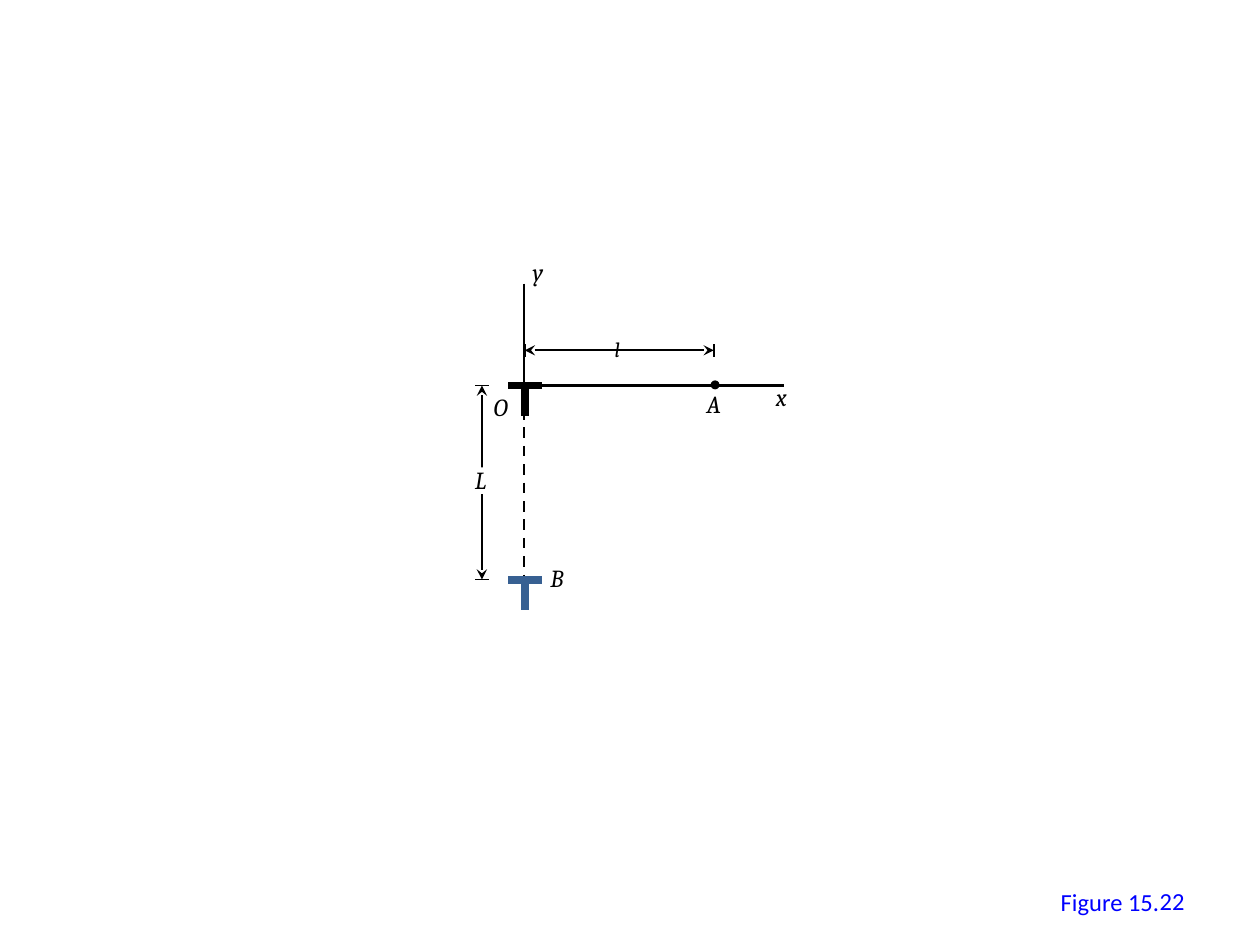
from collections import namedtuple

from pptx import Presentation
from pptx.dml.color import RGBColor
from pptx.enum.dml import MSO_LINE_DASH_STYLE as Dash
from pptx.enum.shapes import MSO_CONNECTOR as Connector, MSO_SHAPE as Shape
from pptx.enum.text import MSO_ANCHOR as Anchor, MSO_AUTO_SIZE as AutoSize, PP_ALIGN as Align
from pptx.oxml.ns import qn
from pptx.util import Inches, Pt
from lxml.etree import SubElement

Box = namedtuple("Box", "left top width height")
CELL = 0.1
BLACK, WHITE, BLUE, STEEL = "000000", "FFFFFF", "0000FF", "376092"
SYMBOL = {"name": "Cambria", "size": Pt(14), "italic": True}
SMALL_SYMBOL = {**SYMBOL, "size": Pt(12)}
CAPTION = {"name": "Calibri", "size": Pt(14)}


def cells(*values):
    """Turn grid columns or rows into lengths."""
    return [Inches(value * CELL) for value in values]


def paint(color_format, color):
    """Apply a hex colour to a fill, line or font colour."""
    color_format.rgb = RGBColor.from_string(color)


def add_line(slide, start, end, width=1.5, color=BLACK, dash=None, arrows=False):
    """Draw a straight line between two grid points."""
    line = slide.shapes.add_connector(Connector.STRAIGHT, *cells(*start, *end))
    line.line.width = Pt(width)
    paint(line.line.color, color)
    if dash:
        line.line.dash_style = dash
    properties = line.line._get_or_add_ln()
    for tag in ("a:headEnd", "a:tailEnd") if arrows else ():
        SubElement(properties, qn(tag), type="stealth")
    SubElement(line._element.spPr, qn("a:effectLst"))


def add_filled(slide, kind, box, color, line_width=None):
    """Draw a filled shape, outlined in its own colour if a width is given."""
    shape = slide.shapes.add_shape(kind, *cells(*box))
    shape.shadow.inherit = False
    shape.fill.solid()
    paint(shape.fill.fore_color, color)
    if line_width:
        paint(shape.line.color, color)
        shape.line.width = Pt(line_width)
    else:
        shape.line.fill.background()


def add_text(slide, box, text, style, color=BLACK, align=None):
    """Write one label; an aligned label wraps in its box, others fit the text."""
    frame = slide.shapes.add_textbox(*cells(*box)).text_frame
    frame.word_wrap = align is not None
    frame.auto_size = AutoSize.NONE if align else AutoSize.SHAPE_TO_FIT_TEXT
    frame.vertical_anchor = Anchor.MIDDLE if align else Anchor.TOP
    paragraph = frame.paragraphs[0]
    paragraph.alignment = align
    run = paragraph.add_run()
    run.text = text
    for name, value in style.items():
        setattr(run.font, name, value)
    paint(run.font.color, color)


def add_axes(slide, box):
    """Draw the x axis, the y axis and the dashed path below the origin."""
    left, bottom = box.left, box.top + box.height
    add_line(slide, (left + box.width, bottom), (left, bottom))
    add_line(slide, (left, box.top), (left, bottom - 0.3))
    add_line(slide, (left, bottom + 0.4), (left, bottom + 15.4), dash=Dash.DASH)


def add_tee(slide, box, color):
    """Draw a T from a bar along the top of the box and a stem down its middle."""
    middle = box.left + box.width / 2
    add_line(slide, (box.left + box.width, box.top), (box.left, box.top), 4.5, color)
    add_line(slide, (middle, box.top), (middle, box.top + box.height), 4.5, color)


def add_dimension(slide, box):
    """Draw a double arrow along the longer side of the box, with end ticks."""
    left, top, width, height = box
    right, bottom = left + width, top + height
    if width > height:
        middle = top + height / 2
        add_line(slide, (left, middle), (right, middle), 1, arrows=True)
        for column in (left, right):
            add_line(slide, (column, bottom), (column, top), 1)
    else:
        middle = left + width / 2
        add_line(slide, (middle, bottom), (middle, top), 1, arrows=True)
        for row in (bottom, top):
            add_line(slide, (right, row), (left, row), 1)


def add_symbols(slide, box):
    """Place the names of axes and points, offset from the corner of the box."""
    for text, column, row, width in (
        ("y", 4.6, 0, 3.4), ("x", 23.9, 9.9, 3.4), ("O", 1.5, 10.7, 4),
        ("A", 18.4, 10.5, 3.7), ("B", 6, 24.3, 3.7), ("L", 0, 16.5, 3.6),
    ):
        add_text(slide, Box(box.left + column, box.top + row, width, 3.4), text, SYMBOL)
    add_text(slide, Box(box.left + 11.1, box.top + 6.3, 2.9, 3), "l", SMALL_SYMBOL)


def add_caption(slide, box):
    """Write the figure number at the lower right."""
    add_text(slide, Box(box.left + 11.5, box.top + 0.4, 9.9, 3.4), "Figure 15.", CAPTION, BLUE)
    add_text(slide, box, "22", CAPTION, BLUE, Align.RIGHT)


def main():
    """Build the slide and save it."""
    presentation = Presentation()
    presentation.slide_width, presentation.slide_height = cells(100, 75)
    slide = presentation.slides.add_slide(presentation.slide_layouts[6])
    add_axes(slide, Box(41.6, 22.5, 20.6, 8.1))
    for row, color in ((30.6, BLACK), (46, STEEL)):
        add_tee(slide, Box(40.3, row, 2.7, 2.4), color)
    add_dimension(slide, Box(41.65, 27.3, 15, 1))
    add_dimension(slide, Box(37.7, 30.6, 1.1, 15.4))
    add_filled(slide, Shape.RECTANGLE, Box(37.2, 37.1, 1.9, 2.1), WHITE)
    add_symbols(slide, Box(36.7, 19.9, 27.3, 27.7))
    add_filled(slide, Shape.OVAL, Box(56.5, 30.3, 0.5, 0.5), BLACK, 1.5)
    add_caption(slide, Box(71.7, 69.5, 23.3, 4))
    presentation.save("out.pptx")


if __name__ == "__main__":
    main()
